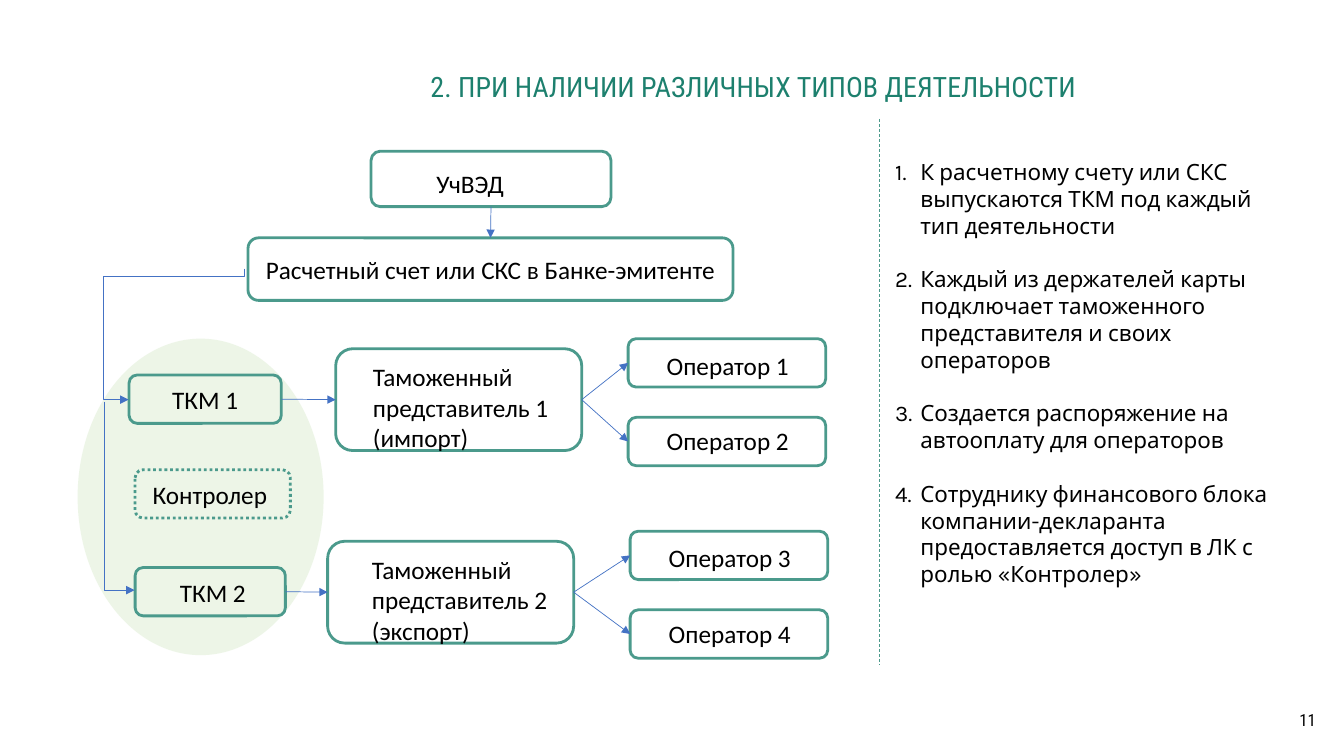
import pptx
import pptx.dml.color
import pptx.enum.dml
import pptx.enum.shapes
import pptx.enum.text
import pptx.oxml
import pptx.oxml.ns
import pptx.util

RGBColor = pptx.dml.color.RGBColor
SHAPES = pptx.enum.shapes.MSO_SHAPE
CONNECTORS = pptx.enum.shapes.MSO_CONNECTOR
ALIGN = pptx.enum.text.PP_ALIGN
ANCHOR = pptx.enum.text.MSO_ANCHOR
DASH = pptx.enum.dml.MSO_LINE
BLACK = RGBColor(0x00, 0x00, 0x00)
TITLE_GREEN = RGBColor(0x1D, 0x80, 0x6E)
BORDER_GREEN = RGBColor(0x4B, 0x9A, 0x8C)
PALE_GREEN = RGBColor(0xE2, 0xF0, 0xD9)
ARROW_BLUE = RGBColor(0x44, 0x72, 0xC4)
BOTTOM, LEFT, RIGHT = 2, 1, 3
CELL = pptx.util.Inches(0.1)
STEPS = [
    "К расчетному счету или СКС выпускаются ТКМ под каждый тип деятельности",
    "Каждый из держателей карты подключает таможенного представителя и своих операторов",
    "Создается распоряжение на автооплату для операторов",
    "Сотруднику финансового блока компании-декларанта предоставляется доступ в ЛК с ролью «Контролер»",
]


def cells(*counts):
    """Convert counts of grid cells to lengths."""
    return [round(count * CELL) for count in counts]


def inside(box, left, top, width, height):
    """Return an area placed relative to the corner of a box, in cells."""
    return box[0] + left, box[1] + top, width, height


def append_xml(parent, markup):
    """Append a drawing element given as a tag with attributes."""
    namespace = pptx.oxml.ns.nsdecls("a")
    element = pptx.oxml.parse_xml(f"<a:{markup} {namespace}/>")
    parent.append(element)
    return element


def style_text(paragraph, font_name, size, color=BLACK):
    """Set the font of every run in a paragraph."""
    for run in paragraph.runs:
        run.font.name = font_name
        run.font.size = pptx.util.Pt(size)
        run.font.color.rgb = color


def add_text(slide, box, text, size, color=BLACK, align=ALIGN.LEFT):
    """Add a one-line heading or number, centred vertically in its box."""
    frame = slide.shapes.add_textbox(*cells(*box)).text_frame
    frame.word_wrap = True
    frame.vertical_anchor = ANCHOR.MIDDLE
    frame.text = text
    paragraph = frame.paragraphs[0]
    paragraph.alignment = align
    paragraph.line_spacing = 0.9
    style_text(paragraph, "Roboto Condensed", size, color)
    return frame


def add_node(slide, box, text, indent=None, drop=0.8):
    """Add an outlined node, centring its text unless an indent is given."""
    shape = slide.shapes.add_shape(SHAPES.ROUNDED_RECTANGLE, *cells(*box))
    shape.shadow.inherit = False
    shape.fill.background()
    shape.line.color.rgb = BORDER_GREEN
    shape.line.width = pptx.util.Pt(2)
    frame = shape.text_frame
    frame.word_wrap = True
    frame.vertical_anchor = ANCHOR.TOP
    frame.margin_left, frame.margin_top = cells(indent or 0, drop)
    frame.margin_right = frame.margin_bottom = 0
    frame.text = text
    for paragraph in frame.paragraphs:
        paragraph.alignment = ALIGN.CENTER if indent is None else ALIGN.LEFT
        style_text(paragraph, "Calibri", 18)
    return shape


def add_line(slide, kind, ends, color, arrow=True):
    """Add a thin connector between two points given in cells."""
    line = slide.shapes.add_connector(kind, *cells(*ends))
    line.line.color.rgb = color
    line.line.width = pptx.util.Pt(0.5)
    if arrow:
        append_xml(line.line._get_or_add_ln(), 'tailEnd type="triangle"')
    append_xml(line._element.spPr, "effectLst")
    return line


def join(slide, source, source_side, target, target_side):
    """Join two nodes with a straight arrow."""
    arrow = add_line(slide, CONNECTORS.STRAIGHT, (0, 0, 0, 0), ARROW_BLUE)
    arrow.begin_connect(source, source_side)
    arrow.end_connect(target, target_side)


def add_bent_arrow(slide, ends, preset, degrees, adjustments=()):
    """Add a turned elbow arrow of the given connector preset."""
    arrow = add_line(slide, CONNECTORS.ELBOW, ends, ARROW_BLUE)
    properties = arrow._element.spPr
    properties.find(pptx.oxml.ns.qn("a:xfrm")).set("rot", str(degrees * 60000))
    geometry = properties.find(pptx.oxml.ns.qn("a:prstGeom"))
    geometry.set("prst", preset)
    guides = geometry.find(pptx.oxml.ns.qn("a:avLst"))
    for number, share in enumerate(adjustments, 1):
        append_xml(guides, f'gd name="adj{number}" fmla="val {round(share * 100000)}"')


def add_branch(slide, box, card, broker, operators):
    """Add a card, its customs broker and a fan of two operators."""
    card_left, card_width, card_text, card_indent = card
    broker_left, broker_text, broker_indent = broker
    operators_left, first_number = operators
    card_node = add_node(slide, inside(box, card_left, 3.6, card_width, 4.8), card_text, card_indent, 0.7)
    broker_node = add_node(slide, inside(box, broker_left, 1, 24.4, 10.1), broker_text, broker_indent)
    join(slide, card_node, RIGHT, broker_node, LEFT)
    for row in range(2):
        area = inside(box, operators_left, 7.8 * row, 19.6, 4.8)
        operator = add_node(slide, area, f"Оператор {first_number + row}", 3.6, 0.9 - 0.3 * row)
        join(slide, broker_node, RIGHT, operator, LEFT)


def add_diagram(slide, box):
    """Draw the scheme from the participant down to the operators."""
    cards_area = slide.shapes.add_shape(SHAPES.OVAL, *cells(*inside(box, 0, 18.6, 24.4, 31.4)))
    cards_area.shadow.inherit = False
    cards_area.fill.solid()
    cards_area.fill.fore_color.rgb = PALE_GREEN
    color = cards_area._element.spPr.find(".//" + pptx.oxml.ns.qn("a:srgbClr"))
    append_xml(color, 'alpha val="61000"')
    cards_area.line.fill.background()

    participant = add_node(slide, inside(box, 29.1, 0, 23.8, 5.5), "УчВЭД", 6.2, 1.4)
    account = add_node(slide, inside(box, 16.9, 8.6, 48.1, 6.2), "Расчетный счет или СКС в Банке-эмитенте", drop=1.3)
    join(slide, participant, BOTTOM, account, 0)

    add_branch(slide, inside(box, 0, 18.6, box[2], 12.6), (5.1, 15.1, "ТКМ 1", None),
               (25.6, "Таможенный представитель 1\n(импорт)", 3.2), (54.6, 1))
    add_branch(slide, inside(box, 0, 37.7, box[2], 12.6), (5.7, 14.9, "ТКМ 2", 4.2),
               (24.8, "Таможенный представитель 2\n(экспорт)", 3.9), (54.8, 3))
    controller = add_node(slide, inside(box, 5.7, 31.6, 15.4, 4.8), "Контролер", 1.5, 0.7)
    controller.line.dash_style = DASH.ROUND_DOT

    left, top = box[:2]
    add_bent_arrow(slide, (left + 4.3, top + 12.4, left + 17.3, top + 23.9),
                   "bentConnector4", 90, (0.06, 1.22))
    add_bent_arrow(slide, (left + 13.5, top + 32.7, left - 5.2, top + 35.7), "bentConnector2", 270)


def add_steps(slide, box):
    """List the numbered steps in a text box."""
    frame = slide.shapes.add_textbox(*cells(*box)).text_frame
    frame.word_wrap = True
    frame.text = "\n".join(STEPS)
    for number, paragraph in enumerate(frame.paragraphs):
        properties = paragraph._p.get_or_add_pPr()
        indent = cells(2.5)[0]
        properties.set("marL", str(indent))
        properties.set("indent", str(-indent))
        if number:
            paragraph.space_before = pptx.util.Pt(19)
        append_xml(properties, 'buFont typeface="Karla"')
        append_xml(properties, 'buAutoNum type="arabicPeriod"')
        style_text(paragraph, "Karla", 16)


def main():
    """Build the slide and save it."""
    presentation = pptx.Presentation()
    presentation.slide_width = pptx.util.Inches(13.33)
    presentation.slide_height = pptx.util.Inches(7.5)
    slide = presentation.slides.add_slide(presentation.slide_layouts[6])
    title = add_text(slide, (42.7, 4.8, 85.4, 7.9), "2. ПРИ НАЛИЧИИ РАЗЛИЧНЫХ ТИПОВ ДЕЯТЕЛЬНОСТИ", 20, TITLE_GREEN)
    title.margin_left = title.margin_right = title.margin_top = title.margin_bottom = 0
    add_diagram(slide, (7.7, 15, 74.4, 50.3))
    divider = add_line(slide, CONNECTORS.STRAIGHT, (87.2, 11.8, 87.2, 66), BORDER_GREEN, arrow=False)
    divider.line.dash_style = DASH.DASH
    add_steps(slide, (87.8, 15.2, 40.2, 46.8))
    add_text(slide, (101.5, 69.5, 30, 4), "11", 12, align=ALIGN.RIGHT)
    presentation.save("out.pptx")


if __name__ == "__main__":
    main()
